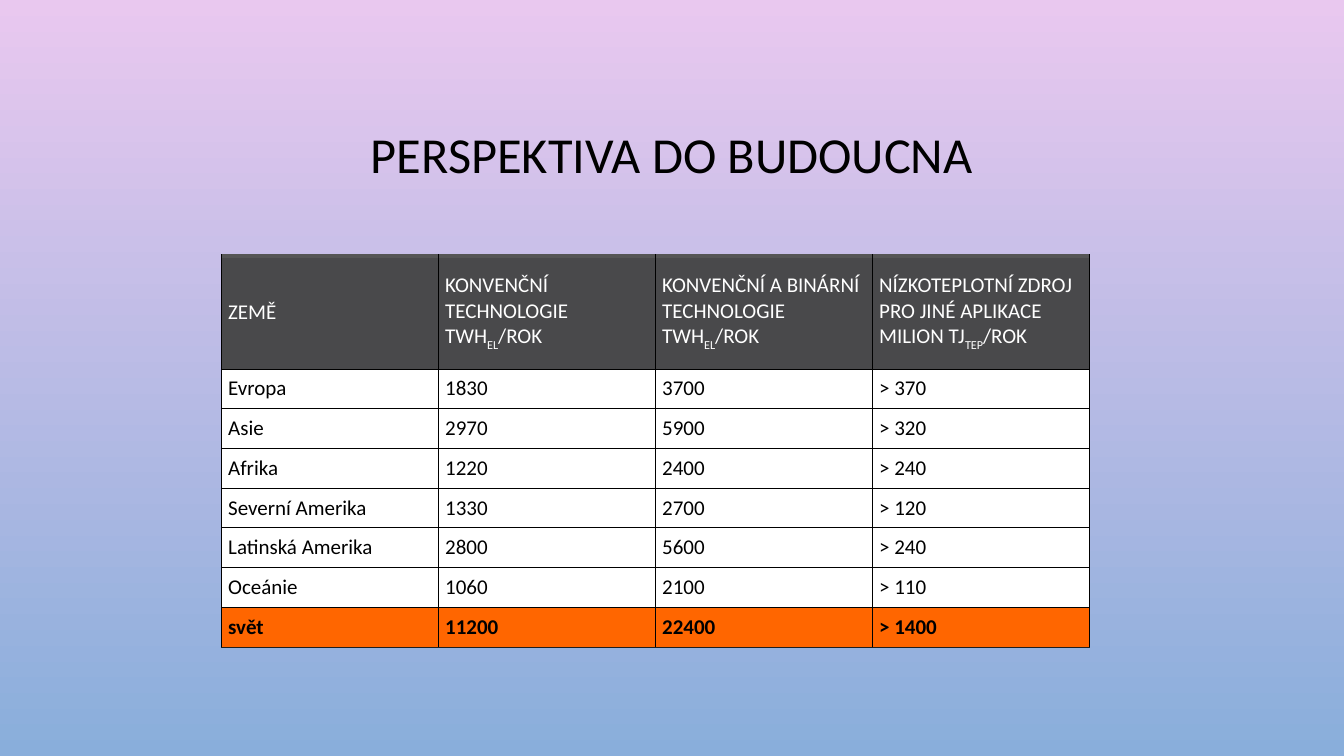
from dataclasses import dataclass

from lxml import etree
from pptx import Presentation
from pptx import util as u
from pptx.dml.color import RGBColor
from pptx.enum import text
from pptx.oxml.ns import qn

PX = 6350  # EMU per px, 144 px to the inch
FONT = "Calibri"
BLACK = RGBColor(0x00, 0x00, 0x00)
WHITE = RGBColor(0xFF, 0xFF, 0xFF)
PINK = RGBColor(0xE9, 0xC8, 0xEF)
BLUE = RGBColor(0x89, 0xAE, 0xDB)
CHARCOAL = RGBColor(0x49, 0x49, 0x4B)
GRAY = RGBColor(0x55, 0x55, 0x55)
NEAR_BLACK = RGBColor(0x1F, 0x1F, 0x1F)
ORANGE = RGBColor(0xFF, 0x66, 0x00)

LEFT, TOP, COL_WIDTH = 316, 366, 310
HEADER_HEIGHT, ROW_HEIGHT, CELL_MARGIN = 161, 56, 10


@dataclass(frozen=True)
class Border:
    color: RGBColor = BLACK
    width: float = 0.6


@dataclass(frozen=True)
class RowStyle:
    fill: RGBColor
    color: RGBColor = BLACK
    bold: bool = False
    top: Border = Border()
    bottom: Border = Border()


HEADER = RowStyle(CHARCOAL, WHITE, top=Border(GRAY, 3))
BODY = RowStyle(WHITE)
TOTAL = RowStyle(ORANGE, bold=True, bottom=Border(NEAR_BLACK))

# A cell is a tuple of runs; every second run is a subscript.
HEADINGS = [
    ("ZEMĚ",),
    ("KONVENČNÍ TECHNOLOGIE TWH", "EL", "/ROK"),
    ("KONVENČNÍ A BINÁRNÍ TECHNOLOGIE TWH", "EL", "/ROK"),
    ("NÍZKOTEPLOTNÍ ZDROJ PRO JINÉ APLIKACE MILION TJ", "TEP", "/ROK"),
]
REGIONS = [
    ("Evropa", 1830, 3700, 370),
    ("Asie", 2970, 5900, 320),
    ("Afrika", 1220, 2400, 240),
    ("Severní Amerika", 1330, 2700, 120),
    ("Latinská Amerika", 2800, 5600, 240),
    ("Oceánie", 1060, 2100, 110),
    ("svět", 11200, 22400, 1400),
]


def px(n: int) -> u.Emu:
    return u.Emu(n * PX)


def add_run(p, content: str, *, size: float, color: RGBColor,
            bold: bool = False, subscript: bool = False) -> None:
    r = p.add_run()
    r.text = content
    r.font.name, r.font.size, r.font.bold = FONT, u.Pt(size), bold
    r.font.color.rgb = color
    if subscript:
        r._r.get_or_add_rPr().set("baseline", "-25000")


def add_border(cell, side: str, border: Border) -> None:
    ln = etree.SubElement(cell._tc.get_or_add_tcPr(), qn(f"a:ln{side}"),
                          w=str(u.Pt(border.width)))
    fill = etree.SubElement(ln, qn("a:solidFill"))
    etree.SubElement(fill, qn("a:srgbClr"), val=str(border.color))


def fill_cell(cell, runs: tuple[str, ...], style: RowStyle) -> None:
    cell.vertical_anchor = text.MSO_ANCHOR.MIDDLE
    cell.margin_left = cell.margin_right = px(CELL_MARGIN)
    cell.margin_top = cell.margin_bottom = px(CELL_MARGIN)
    for side, border in (("L", Border()), ("R", Border()),
                         ("T", style.top), ("B", style.bottom)):
        add_border(cell, side, border)
    cell.fill.solid()
    cell.fill.fore_color.rgb = style.fill
    for i, content in enumerate(runs):
        add_run(cell.text_frame.paragraphs[0], content, size=15,
                color=style.color, bold=style.bold, subscript=i % 2 == 1)


def add_outlook_table(slide) -> None:
    rows = [HEADINGS]
    rows += [[(name,), (str(conventional),), (str(binary),), (f"> {heat}",)]
             for name, conventional, binary, heat in REGIONS]
    styles = [HEADER] + [BODY] * (len(REGIONS) - 1) + [TOTAL]
    heights = [HEADER_HEIGHT] + [ROW_HEIGHT] * len(REGIONS)
    columns = len(HEADINGS)
    table = slide.shapes.add_table(
        len(rows), columns, px(LEFT), px(TOP),
        px(COL_WIDTH * columns), px(sum(heights))).table
    table.first_row = table.horz_banding = False
    for column in table.columns:
        column.width = px(COL_WIDTH)
    for row, cells, style, height in zip(table.rows, rows, styles, heights):
        row.height = px(height)
        for cell, runs in zip(row.cells, cells):
            fill_cell(cell, runs, style)


def set_background(slide) -> None:
    fill = slide.background.fill
    fill.gradient()
    fill.gradient_angle = 270
    for stop, color in zip(fill.gradient_stops, (PINK, BLUE)):
        stop.color.rgb = color


def set_title(slide, content: str) -> None:
    sp = slide.shapes.title
    sp.left, sp.top, sp.width, sp.height = px(144), px(98), px(1632), px(252)
    tf = sp.text_frame
    tf.vertical_anchor = text.MSO_ANCHOR.MIDDLE
    p = tf.paragraphs[0]
    p.alignment = text.PP_ALIGN.CENTER
    p.line_spacing = 0.9
    add_run(p, content, size=36, color=BLACK)


def main() -> None:
    prs = Presentation()
    prs.slide_width, prs.slide_height = px(1920), px(1080)
    slide = prs.slides.add_slide(prs.slide_layouts.get_by_name("Title Only"))
    set_background(slide)
    set_title(slide, "PERSPEKTIVA DO BUDOUCNA")
    add_outlook_table(slide)
    prs.save("out.pptx")


if __name__ == "__main__":
    main()
